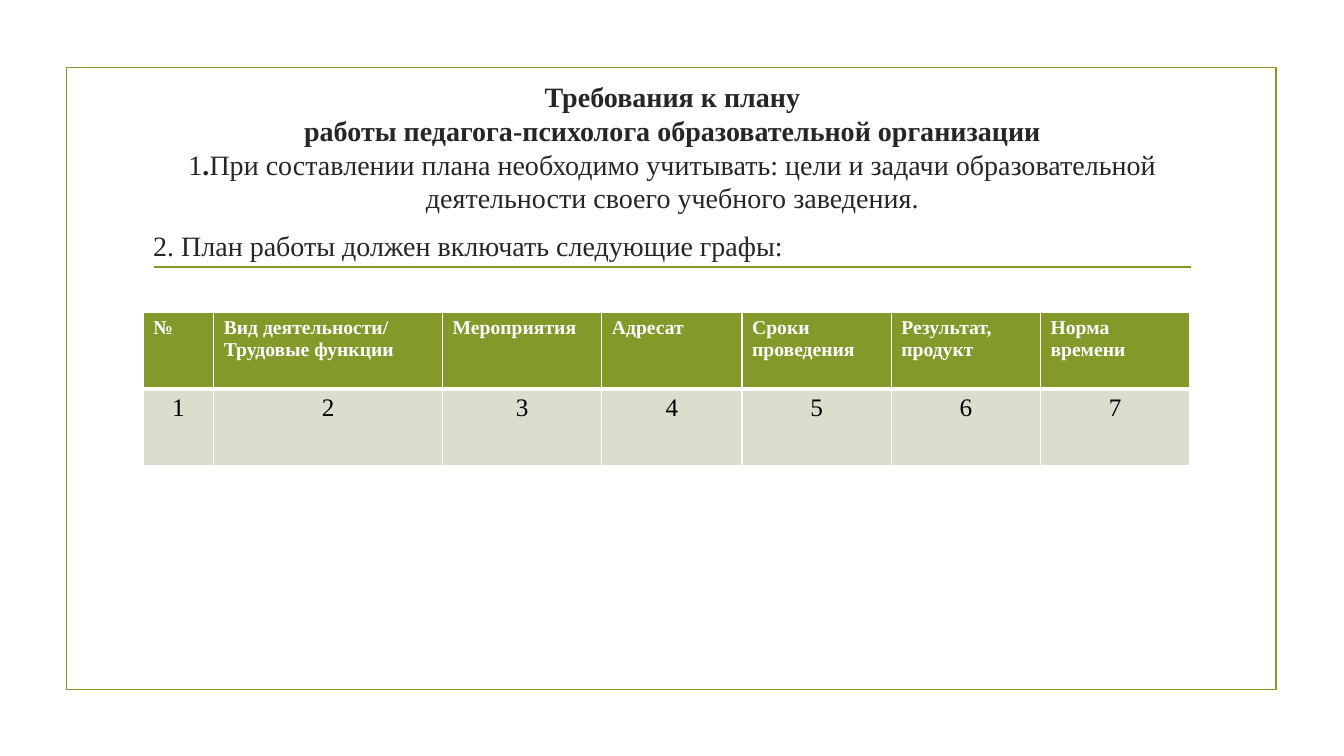
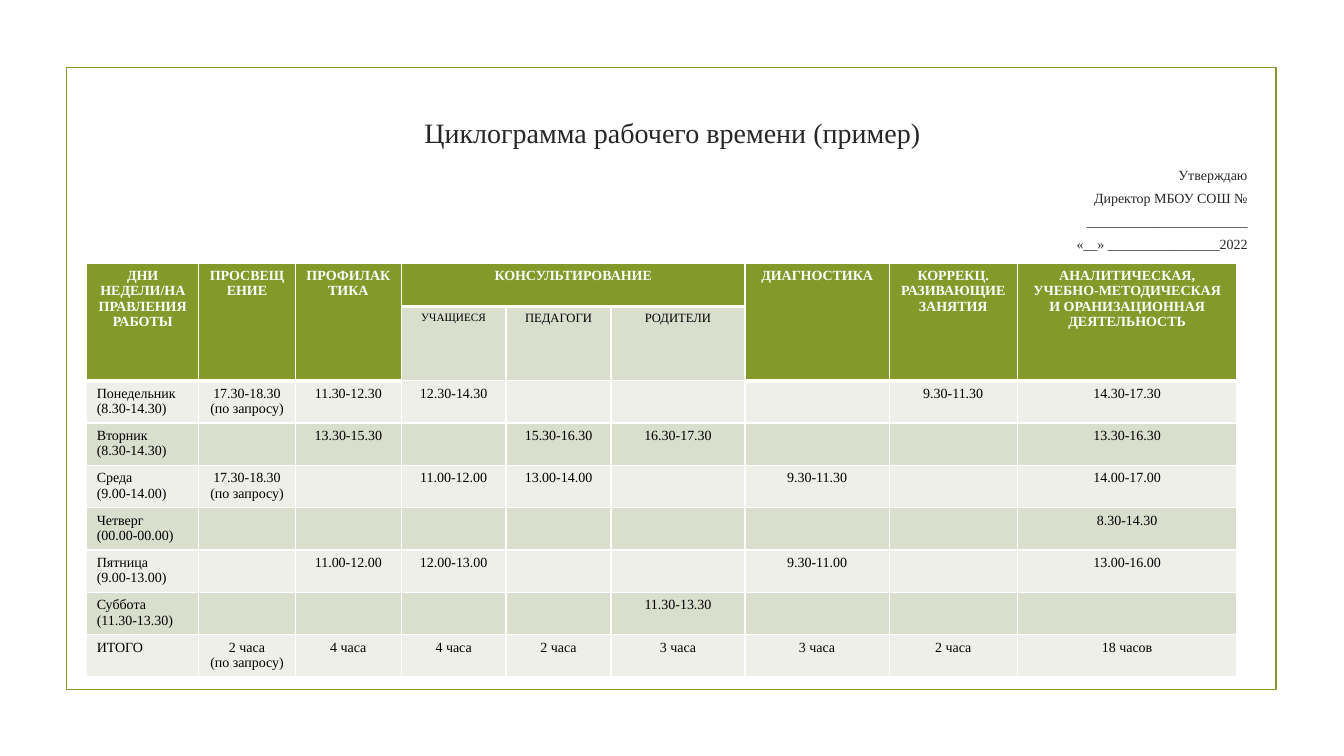
from dataclasses import dataclass

from lxml import etree
from pptx import Presentation
from pptx import util as u
from pptx.dml.color import RGBColor
from pptx.enum import shapes, text
from pptx.oxml import ns

LEFT, CENTER, RIGHT = text.PP_ALIGN.LEFT, text.PP_ALIGN.CENTER, text.PP_ALIGN.RIGHT


@dataclass(frozen=True)
class Theme:
    font: str = "Times New Roman"
    accent: str = "83992A"
    band_dark: str = "D9DECD"
    band_light: str = "EDEFE8"
    ink: str = "262626"
    black: str = "000000"
    white: str = "FFFFFF"
    title_size: float = 20
    value_size: float = 18
    heading_size: float = 14
    small_size: float = 10
    label_size: float = 9
    tiny_size: float = 8
    frame_line: float = 1.25
    thin_border: float = 1
    thick_border: float = 3


class Deck:
    def __init__(self, theme):
        self.t = theme
        self.prs = Presentation()
        self.prs.slide_width = u.Inches(13.33)
        self.prs.slide_height = u.Inches(7.5)
        self.s = None

    def slide(self):
        """Start a slide with the shared frame and rule."""
        self.s = self.prs.slides.add_slide(self.prs.slide_layouts[6])
        sp = self.s.shapes.add_shape(shapes.MSO_SHAPE.RECTANGLE, u.Inches(0.66),
                                     u.Inches(0.67), u.Inches(12), u.Inches(6.17))
        sp.shadow.inherit = False
        sp.fill.background()
        self.outline(sp)
        rule = self.s.shapes.add_connector(shapes.MSO_CONNECTOR.STRAIGHT, u.Inches(1.53),
                                           u.Inches(2.65), u.Inches(11.81), u.Inches(2.65))
        etree.SubElement(rule._element.spPr, ns.qn("a:effectLst"))
        self.outline(rule)

    def outline(self, sp):
        sp.line.color.rgb = RGBColor.from_string(self.t.accent)
        sp.line.width = u.Pt(self.t.frame_line)

    def style(self, tf, size, color, align, bold=False):
        for p in tf.paragraphs:
            p.alignment = align
            for r in p.runs:
                r.font.name = self.t.font
                r.font.size = u.Pt(size)
                r.font.bold = bold
                r.font.color.rgb = RGBColor.from_string(color)

    def text(self, box, lines, size, align=LEFT, anchor=text.MSO_ANCHOR.TOP,
             spacing=None, before=0):
        tf = self.s.shapes.add_textbox(*map(u.Inches, box)).text_frame
        tf.word_wrap = True
        tf.vertical_anchor = anchor
        tf.text = "\n".join(lines)
        self.style(tf, size, self.t.ink, align)
        for i, p in enumerate(tf.paragraphs):
            p.line_spacing = spacing
            if i:
                p.space_before = u.Pt(before)
        return tf

    def title(self, box, lines):
        return self.text(box, lines, self.t.title_size, CENTER,
                         text.MSO_ANCHOR.MIDDLE, 1.0)

    def borders(self, cell, top, bottom):
        tc_pr = cell._tc.get_or_add_tcPr()
        thin = self.t.thin_border
        for side, width in zip("LRTB", (thin, thin, top, bottom)):
            ln = etree.SubElement(tc_pr, ns.qn(f"a:ln{side}"), w=str(u.Pt(width)))
            fill = etree.SubElement(ln, ns.qn("a:solidFill"))
            etree.SubElement(fill, ns.qn("a:srgbClr"), val=self.t.white)

    def cell(self, cell, value, fill, top, bottom, size, **style):
        self.borders(cell, top, bottom)
        cell.margin_bottom = u.Inches(0.02)
        cell.fill.solid()
        cell.fill.fore_color.rgb = RGBColor.from_string(fill)
        if value:
            cell.text_frame.text = value
            self.style(cell.text_frame, size, **style)
        else:
            # An empty cell must not make its row taller.
            p = cell.text_frame.paragraphs[0]
            etree.SubElement(p._p, ns.qn("a:endParaRPr"), sz=str(int(size * 100)))

    def table(self, left, top, cols, heights, rows, look, merges=()):
        """Fill a table; look(row, col) gives the fill and text style of a cell."""
        table = self.s.shapes.add_table(
            len(rows), len(cols), u.Inches(left), u.Inches(top),
            u.Inches(sum(cols)), u.Inches(sum(heights))).table
        table.first_row = table.horz_banding = False
        for col, width in zip(table.columns, cols):
            col.width = u.Inches(width)
        for row, height in zip(table.rows, heights):
            row.height = u.Inches(height)
        for first, last in merges:
            table.cell(*first).merge(table.cell(*last))

        def edge(i, j):
            """Width of the line below a cell."""
            header = i >= 0 and look(i, j)["fill"] == self.t.accent
            return self.t.thick_border if header else self.t.thin_border

        for i, row in enumerate(rows):
            for j, value in enumerate(row):
                self.cell(table.cell(i, j), value, top=edge(i - 1, j),
                          bottom=edge(i, j), **look(i, j))


def requirements_slide(d):
    t = d.t
    d.slide()
    tf = d.title((1.42, 0.7, 10.5, 1.52), [
        "Требования к плану",
        "работы педагога-психолога образовательной организации",
        "1"])
    *heads, item = tf.paragraphs
    for part in (".", "При составлении плана необходимо учитывать: цели и задачи "
                      "образовательной деятельности своего учебного заведения."):
        item.add_run().text = part
    d.style(tf, t.title_size, t.ink, CENTER)
    for r in (*(p.runs[0] for p in heads), item.runs[1]):
        r.font.bold = True
    d.text((1.42, 2.22, 10.5, 0.42),
           ["2. План работы должен включать следующие графы:"], t.title_size)

    def look(i, j):
        if i == 0:
            return dict(fill=t.accent, size=t.heading_size, color=t.white,
                        align=LEFT, bold=True)
        return dict(fill=t.band_dark, size=t.value_size, color=t.black, align=CENTER)

    names = ["№", "Вид деятельности/\nТрудовые функции", "Мероприятия", "Адресат",
             "Сроки проведения", "Результат, продукт", "Норма времени"]
    numbers = [str(n) for n in range(1, len(names) + 1)]
    d.table(1.42, 3.1, [0.7, 2.27, 1.58, 1.39] + [1.48] * 3, [0.76] * 2,
            [names, numbers], look)


def schedule_slide(d):
    t = d.t
    d.slide()
    d.title((1.42, 1.07, 10.5, 0.49), ["Циклограмма рабочего времени (пример)"])
    d.text((0.96, 1.57, 11.51, 1.04),
           ["Утверждаю", "Директор МБОУ СОШ №", "_" * 23, "«__» " + "_" * 16 + "2022"],
           t.small_size, RIGHT, spacing=u.Pt(14.4), before=2)

    consulting = range(3, 6)
    pupils = consulting[0]

    def look(i, j):
        if i == 0 or i == 1 and j not in consulting:
            return dict(fill=t.accent, size=t.small_size, color=t.white,
                        align=CENTER, bold=True)
        size = t.small_size
        if i == 1:
            size = t.tiny_size if j == pupils else t.label_size
        return dict(fill=t.band_dark if i % 2 else t.band_light, size=size,
                    color=t.black, align=CENTER if j else LEFT)

    on_request = "\n(по запросу)"
    evening = "17.30-18.30" + on_request
    rows = [
        ["ДНИ НЕДЕЛИ/НАПРАВЛЕНИЯ РАБОТЫ", "ПРОСВЕЩЕНИЕ", "ПРОФИЛАКТИКА",
         "КОНСУЛЬТИРОВАНИЕ", "", "", "ДИАГНОСТИКА", "КОРРЕКЦ. РАЗИВАЮЩИЕ ЗАНЯТИЯ",
         "АНАЛИТИЧЕСКАЯ, УЧЕБНО-МЕТОДИЧЕСКАЯ И ОРАНИЗАЦИОННАЯ ДЕЯТЕЛЬНОСТЬ"],
        ["", "", "", "УЧАЩИЕСЯ", "ПЕДАГОГИ", "РОДИТЕЛИ", "", "", ""],
        ["Понедельник (8.30-14.30)", evening, "11.30-12.30", "12.30-14.30", "", "", "",
         "9.30-11.30", "14.30-17.30"],
        ["Вторник\n(8.30-14.30)", "", "13.30-15.30", "", "15.30-16.30", "16.30-17.30",
         "", "", "13.30-16.30"],
        ["Среда\n(9.00-14.00)", evening, "", "11.00-12.00", "13.00-14.00", "",
         "9.30-11.30", "", "14.00-17.00"],
        ["Четверг\n(00.00-00.00)", "", "", "", "", "", "", "", "8.30-14.30"],
        ["Пятница\n(9.00-13.00)", "", "11.00-12.00", "12.00-13.00", "", "",
         "9.30-11.00", "", "13.00-16.00"],
        ["Суббота\n(11.30-13.30)", "", "", "", "", "11.30-13.30", "", "", ""],
        ["ИТОГО", "2 часа" + on_request, "4 часа", "4 часа", "2 часа", "3 часа",
         "3 часа", "2 часа", "18 часов"],
    ]
    cols = [1.11, 0.96, 1.05, 1.04, 1.04, 1.33, 1.43, 1.27, 2.18]
    merges = [((0, j), (1, j)) for j in range(len(cols)) if j not in consulting]
    merges.append(((0, consulting[0]), (0, consulting[-1])))
    d.table(0.86, 2.61, cols, [0.43, 0.71] + [0.42] * 7, rows, look, merges)


def main():
    d = Deck(Theme())
    requirements_slide(d)
    schedule_slide(d)
    d.prs.save("out.pptx")


if __name__ == "__main__":
    main()
